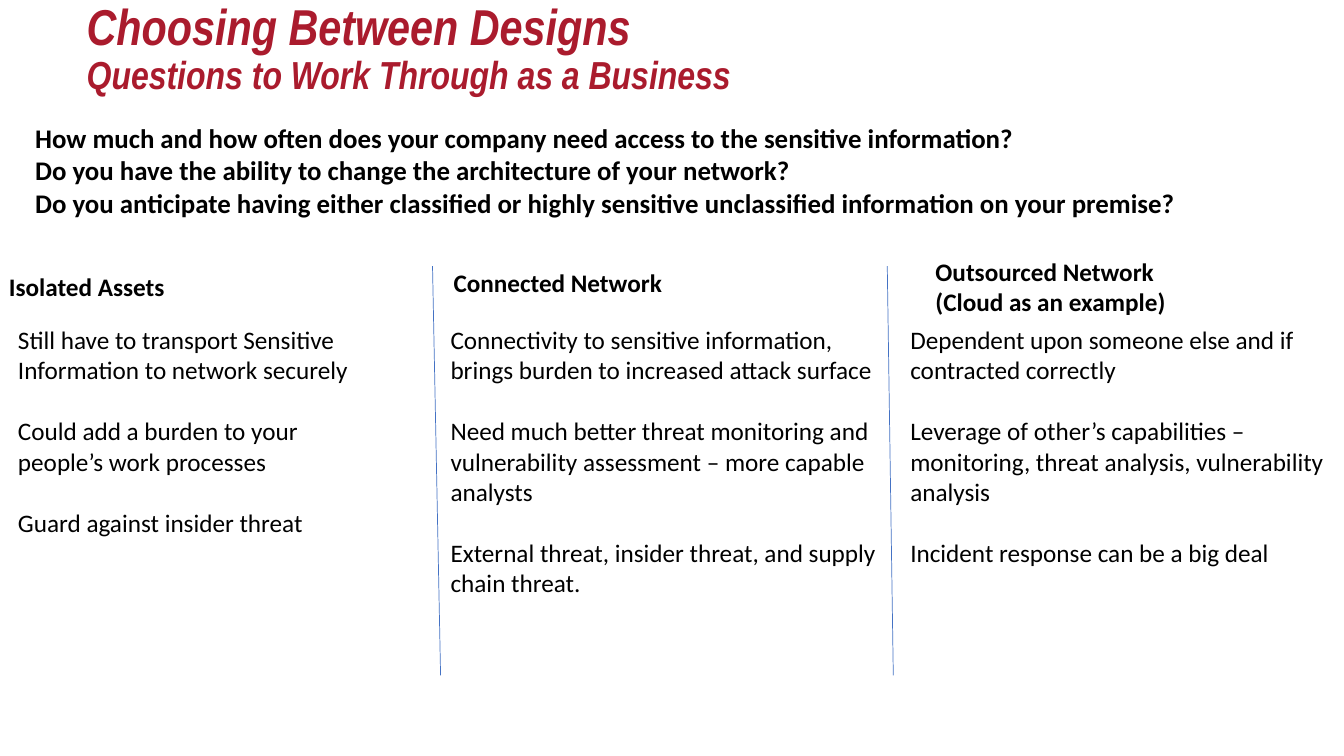
from lxml import etree
from pptx import Presentation
from pptx import util as u
from pptx.dml.color import RGBColor
from pptx.enum import shapes, text
from pptx.oxml.ns import qn

CRIMSON = RGBColor(0xAA, 0x1B, 0x2D)
BLUE = RGBColor(0x44, 0x72, 0xC4)
BLACK = RGBColor(0, 0, 0)

QUESTIONS = [
    "How much and how often does your company need access to the sensitive information?",
    "Do you have the ability to change the architecture of your network?",
    "Do you anticipate having either classified or highly sensitive unclassified information on your premise?",
]

# Each design: heading lines, heading box, points, points box
DESIGNS = [
    (["Isolated Assets"], (-0.01, 2.64, 1.76, 0.4),
     ["Still have to transport Sensitive Information to network securely",
      "Could add a burden to your people’s work processes",
      "Guard against insider threat"], (0.08, 3.17, 3.85, 2.22)),
    (["Connected Network"], (4.4, 2.6, 2.37, 0.4),
     ["Connectivity to sensitive information, brings burden to increased attack surface",
      "Need much better threat monitoring and vulnerability assessment – more capable analysts",
      "External threat, insider threat, and supply chain threat."], (4.37, 3.17, 4.49, 2.83)),
    (["Outsourced Network", "(Cloud as an example)"], (9.18, 2.49, 2.5, 0.71),
     ["Dependent upon someone else and if contracted correctly",
      "Leverage of other’s capabilities – monitoring, threat analysis, vulnerability analysis",
      "Incident response can be a big deal"], (8.93, 3.17, 4.41, 2.52)),
]


class SlideBuilder:
    title_font = "Arial Narrow"
    body_font = "Calibri"

    def __init__(self, s):
        self.s = s

    def run(self, p, words, size, font, color, bold=False, italic=False):
        r = p.add_run()
        r.text = words
        r.font.size = u.Pt(size)
        r.font.name = font
        r.font.bold = bold
        r.font.italic = italic
        r.font.color.rgb = color

    def title(self, box, lines):
        sp = self.s.shapes.title
        sp.left, sp.top, sp.width, sp.height = map(u.Inches, box)
        tf = sp.text_frame
        tf.auto_size = text.MSO_AUTO_SIZE.NONE
        tf.vertical_anchor = text.MSO_ANCHOR.MIDDLE
        p = tf.paragraphs[0]
        p.alignment = text.PP_ALIGN.LEFT
        p.line_spacing = 0.9
        for i, (words, size) in enumerate(lines):
            if i:
                p.add_line_break()
            self.run(p, words, size, self.title_font, CRIMSON, True, True)

    def text_box(self, box, paragraphs, size=18, bold=False, gap=0, wrap=True):
        sp = self.s.shapes.add_textbox(*map(u.Inches, box))
        tf = sp.text_frame
        tf.word_wrap = wrap
        for i, words in enumerate(paragraphs):
            p = tf.add_paragraph() if i else tf.paragraphs[0]
            if i and gap:
                p.space_before = u.Pt(gap)
            self.run(p, words, size, self.body_font, BLACK, bold)

    def divider(self, *ends):
        line = self.s.shapes.add_connector(
            shapes.MSO_CONNECTOR.STRAIGHT, *map(u.Inches, ends))
        line.line.color.rgb = BLUE
        line.line.width = u.Pt(0.5)
        etree.SubElement(line._element.spPr, qn("a:effectLst"))


def main():
    prs = Presentation()
    prs.slide_width, prs.slide_height = u.Inches(13.33), u.Inches(7.5)
    title_only = prs.slide_layouts[5]
    b = SlideBuilder(prs.slides.add_slide(title_only))

    # Title and opening questions
    b.title((0.76, 0, 12.58, 0.99),
            [("Choosing Between Designs", 36),
             ("Questions to Work Through as a Business", 27.9)])
    b.text_box((0.25, 1.16, 12.52, 1.8), QUESTIONS, size=19.2, bold=True)

    # Column dividers
    for top_x, bottom_x in [(4.29, 4.37), (8.8, 8.86)]:
        b.divider(top_x, 2.64, bottom_x, 6.7)

    # One column per design
    for heading, heading_box, points, points_box in DESIGNS:
        b.text_box(heading_box, heading, bold=True, wrap=False)
        b.text_box(points_box, points, gap=22)

    prs.save("out.pptx")


if __name__ == "__main__":
    main()
